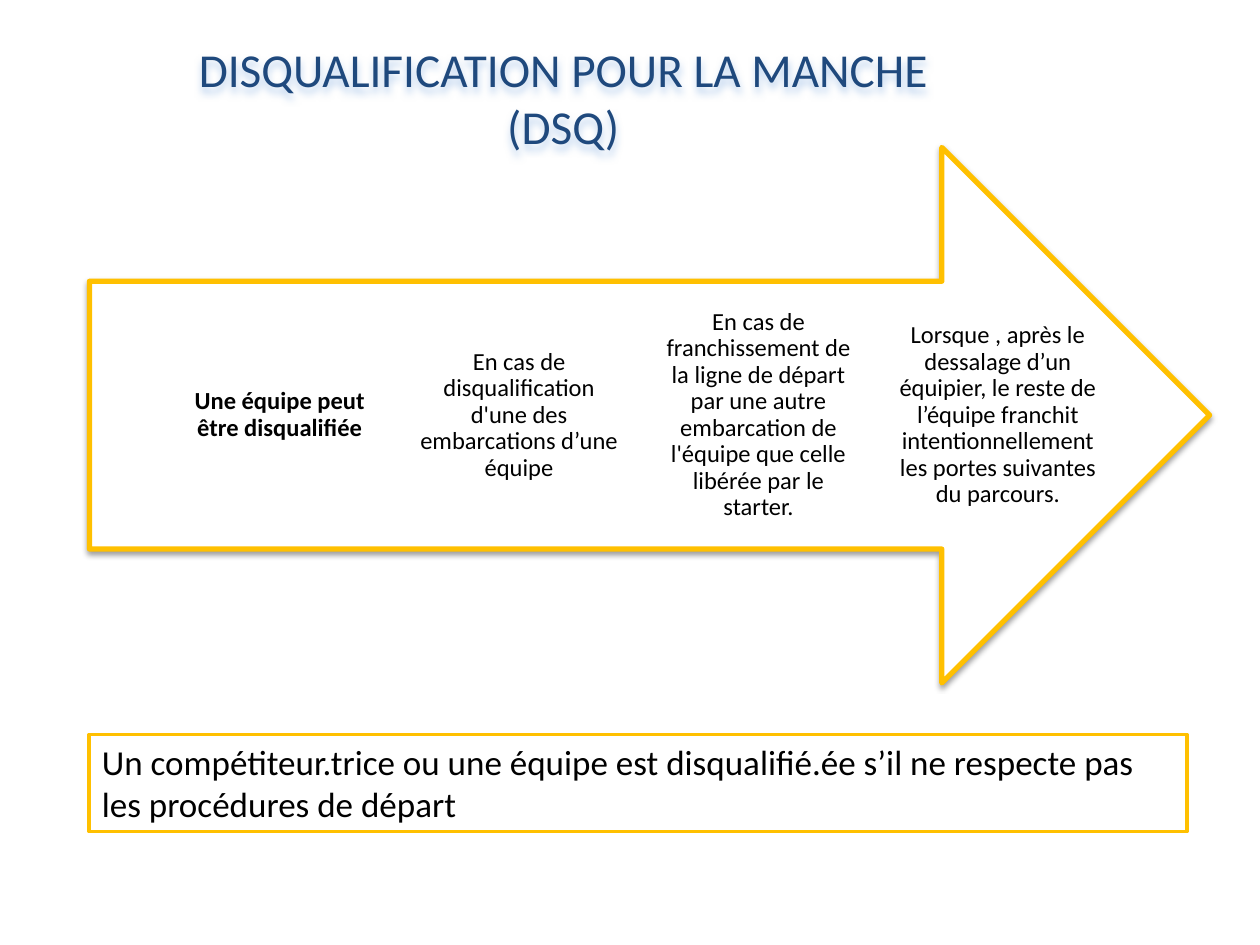
from lxml import etree
from pptx import Presentation
from pptx.dml.color import RGBColor
from pptx.enum import shapes, text
from pptx.oxml import ns
from pptx.util import Inches, Pt

NAVY = RGBColor(0x1F, 0x49, 0x7D)
SHADOW_BLUE = RGBColor(0x8E, 0xB4, 0xE3)
GOLD = RGBColor(0xFF, 0xC0, 0x00)
WHITE = RGBColor(0xFF, 0xFF, 0xFF)
BLACK = RGBColor(0, 0, 0)

STEPS = [
    "Une équipe peut être disqualifiée",
    "En cas de disqualification d'une des embarcations d’une équipe",
    "En cas de franchissement de la ligne de départ par une autre embarcation "
    "de l'équipe que celle libérée par le starter.",
    "Lorsque , après le dessalage d’un équipier, le reste de l’équipe franchit "
    "intentionnellement les portes suivantes du parcours.",
]


def add_shadow(shape, color, opacity, blur, distance):
    """Give the shape a soft shadow that falls straight down."""
    properties = shape._element.spPr
    for effects in properties.findall(ns.qn("a:effectLst")):
        properties.remove(effects)
    effects = etree.SubElement(properties, ns.qn("a:effectLst"))
    shadow = etree.SubElement(
        effects, ns.qn("a:outerShdw"), blurRad=str(Pt(blur)),
        dist=str(Pt(distance)), dir="5400000", algn="ctr", rotWithShape="0")
    tint = etree.SubElement(shadow, ns.qn("a:srgbClr"), val=str(color))
    etree.SubElement(tint, ns.qn("a:alpha"), val=str(opacity * 1000))


def write(shape, words, size, color=BLACK, bold=False,
          align=text.PP_ALIGN.CENTER, anchor=text.MSO_ANCHOR.TOP,
          margins=(0.1, 0.05), spacing=None):
    """Fill the shape with one wrapped paragraph."""
    frame = shape.text_frame
    frame.word_wrap = True
    frame.vertical_anchor = anchor
    frame.margin_left = frame.margin_right = Inches(margins[0])
    frame.margin_top = frame.margin_bottom = Inches(margins[1])
    paragraph = frame.paragraphs[0]
    paragraph.alignment = align
    paragraph.line_spacing = spacing
    run = paragraph.add_run()
    run.text = words
    run.font.name = "Calibri"
    run.font.size = Pt(size)
    run.font.bold = bold
    run.font.color.rgb = color


def add_outlined(container, kind, box, line_width):
    """Add a white shape with a gold outline."""
    shape = container.add_shape(kind, *map(Inches, box))
    shape.shadow.inherit = False
    shape.fill.solid()
    shape.fill.fore_color.rgb = WHITE
    shape.line.color.rgb = GOLD
    shape.line.width = Pt(line_width)
    return shape


def add_title(slide, box):
    title = slide.shapes.add_textbox(*map(Inches, box))
    write(title, "DISQUALIFICATION POUR LA MANCHE (DSQ)", 27, NAVY)
    add_shadow(title, SHADOW_BLUE, 60, 4, 3)


def add_process_arrow(slide, box):
    left, top, width, height = box
    group = slide.shapes.add_group_shape()
    arrow = add_outlined(group.shapes, shapes.MSO_SHAPE.RIGHT_ARROW, box, 3)
    add_shadow(arrow, BLACK, 38, 3.1, 1.6)

    # Four equal columns along the arrow's shaft
    column_width, pitch = 1.58, 1.9
    for index, words in enumerate(STEPS):
        column = group.shapes.add_textbox(
            Inches(left + 0.72 + index * pitch), Inches(top + height / 4),
            Inches(column_width), Inches(height / 2))
        write(column, words, 14, bold=index == 0,
              anchor=text.MSO_ANCHOR.MIDDLE, margins=(0, 0.16), spacing=0.9)


def add_rule_box(slide, box):
    rule = add_outlined(slide.shapes, shapes.MSO_SHAPE.RECTANGLE, box, 2.25)
    write(rule, "Un compétiteur.trice ou une équipe est disqualifié.ée s’il ne "
          "respecte pas les procédures de départ", 20,
          align=text.PP_ALIGN.LEFT)


def main():
    presentation = Presentation()
    presentation.slide_width = Inches(10)
    presentation.slide_height = Inches(7.5)
    slide = presentation.slides.add_slide(presentation.slide_layouts[6])
    add_title(slide, (1.09, 0.27, 6.76, 1.01))
    add_process_arrow(slide, (0.71, 1.17, 8.89, 4.25))
    add_rule_box(slide, (0.71, 5.83, 8.71, 0.77))
    presentation.save("out.pptx")


if __name__ == "__main__":
    main()
